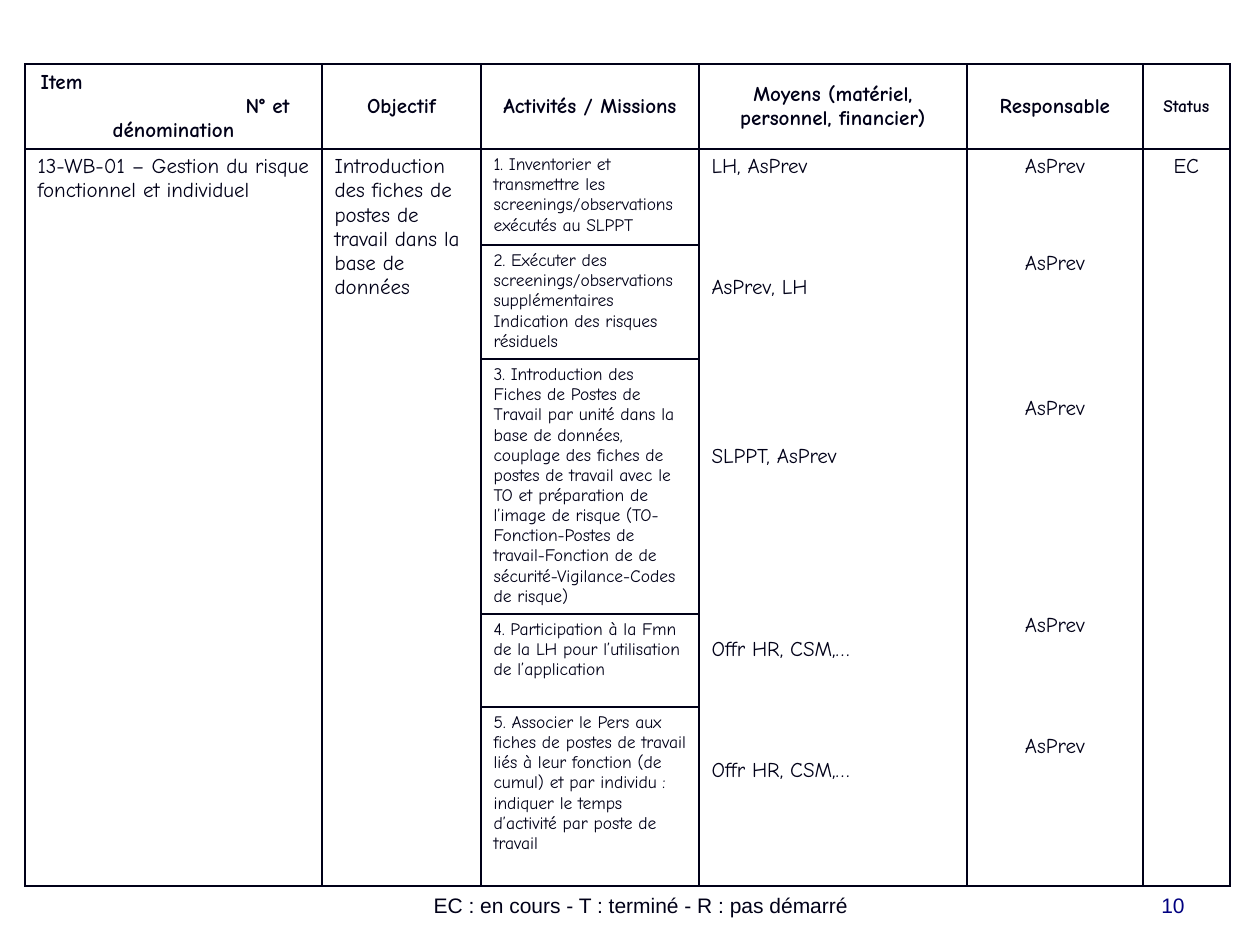
import pptx
import pptx.util
import pptx.dml.color
import pptx.enum.text
import pptx.oxml.ns
from lxml import etree

COLORS = {"ink": "000018", "number": "000080"}
ALIGN = pptx.enum.text.PP_ALIGN
ANCHOR = pptx.enum.text.MSO_ANCHOR
LINE_HEIGHT = 1.15  # line spacing as a share of the text size


def px(length):
    return pptx.util.Emu(round(length * 914400 / 126))


def write(paragraph, text, font="Comic Neue", size=12, color="ink",
          bold=False, align=ALIGN.LEFT, skip=0, indent=0):
    """Fill a paragraph; skip is the number of lines left open above it."""
    if indent:
        paragraph._p.get_or_add_pPr().set("marL", str(px(indent)))
    paragraph.alignment = align
    line = round(size * LINE_HEIGHT, 2)
    paragraph.line_spacing = pptx.util.Pt(line)
    if skip:
        paragraph.space_before = pptx.util.Pt(round(skip * line, 2))
    run = paragraph.add_run()
    run.text = text
    run.font.name = font
    run.font.size = pptx.util.Pt(size)
    run.font.bold = bold
    run.font.color.rgb = pptx.dml.color.RGBColor.from_string(COLORS[color])


class PlanSlide:
    def __init__(self, presentation):
        self.slide = presentation.slides.add_slide(presentation.slide_layouts[6])

    def label(self, left, top, width, height, text, **style):
        box = self.slide.shapes.add_textbox(px(left), px(top), px(width), px(height))
        box.text_frame.word_wrap = True
        box.text_frame.vertical_anchor = ANCHOR.BOTTOM
        write(box.text_frame.paragraphs[0], text, font="Arial", **style)

    def table(self, left, top, widths, heights):
        frame = self.slide.shapes.add_table(
            len(heights), len(widths), px(left), px(top),
            px(sum(widths)), px(sum(heights)))
        grid = frame.table
        grid.first_row = grid.horz_banding = False
        for column, width in zip(grid.columns, widths):
            column.width = px(width)
        for row, height in zip(grid.rows, heights):
            row.height = px(height)
        for cell in grid.iter_cells():
            self.border(cell)
            cell.fill.background()
        return grid

    def border(self, cell):
        qn = pptx.oxml.ns.qn
        properties = cell._tc.get_or_add_tcPr()
        for side in ("a:lnL", "a:lnR", "a:lnT", "a:lnB"):
            line = etree.SubElement(properties, qn(side), w=str(pptx.util.Pt(1)))
            fill = etree.SubElement(line, qn("a:solidFill"))
            etree.SubElement(fill, qn("a:srgbClr"), val=COLORS["ink"])

    def cell(self, cell, lines, anchor=ANCHOR.TOP, margins=(6, 0), **style):
        """Each line is a text with its own format options."""
        cell.vertical_anchor = anchor
        cell.margin_top, cell.margin_bottom = map(px, margins)
        frame = cell.text_frame
        for index, (text, options) in enumerate(lines):
            paragraph = frame.add_paragraph() if index else frame.paragraphs[0]
            write(paragraph, text, **{**style, **options})


HEADINGS = [
    [("Item", {"align": ALIGN.LEFT, "indent": 3}),
     ("N° et", {"align": ALIGN.LEFT, "indent": 208}),
     ("dénomination", {})],
    [("Objectif", {})],
    [("Activités / Missions", {})],
    [("Moyens (matériel, personnel, financier)", {})],
    [("Responsable", {})],
    [("Status", {"size": 10})],
]

ACTIVITIES = [
    ["1. Inventorier et transmettre les screenings/observations exécutés au SLPPT"],
    ["2. Exécuter des screenings/observations supplémentaires",
     "Indication des risques résiduels"],
    ["3. Introduction des Fiches de Postes de Travail par unité dans la base de "
     "données, couplage des fiches de postes de travail avec le TO et préparation "
     "de l’image de risque (TO-Fonction-Postes de travail-Fonction de de "
     "sécurité-Vigilance-Codes de risque)"],
    ["4. Participation à la Fmn de la LH pour l’utilisation de l’application"],
    ["5. Associer le Pers aux fiches de postes de travail liés à leur fonction "
     "(de cumul) et par individu : indiquer le temps d’activité par poste de travail"],
]

MEANS = [("LH, AsPrev", 0), ("AsPrev, LH", 4), ("SLPPT, AsPrev", 6),
         ("Offr HR, CSM,…", 7), ("Offr HR, CSM,…", 4)]
RESPONSIBLE = [("AsPrev", skip) for skip in (0, 3, 5, 8, 4)]

# Columns that span all activities: column, (text, lines skipped), alignment
SPANNING = [
    (0, [("13-WB-01 – Gestion du risque fonctionnel et individuel", 0)], ALIGN.LEFT),
    (1, [("Introduction des fiches de postes de travail dans la base de données", 0)],
     ALIGN.LEFT),
    (3, MEANS, ALIGN.LEFT),
    (4, RESPONSIBLE, ALIGN.CENTER),
    (5, [("EC", 0)], ALIGN.CENTER),
]


def main():
    presentation = pptx.Presentation()
    presentation.slide_width = px(1260)
    presentation.slide_height = px(945)
    plan = PlanSlide(presentation)

    # Legend of the status codes
    plan.label(294, 861, 694, 63, "EC : en cours - T : terminé - R : pas démarré",
               align=ALIGN.CENTER)

    # Action plan
    actions = plan.table(25, 64, widths=[297, 159, 218, 268, 176, 87],
                         heights=[85, 96, 114, 255, 93, 179])
    for column, heading in enumerate(HEADINGS):
        plan.cell(actions.cell(0, column), heading, anchor=ANCHOR.MIDDLE,
                  margins=(3, 3), bold=True, align=ALIGN.CENTER)
    for row, activity in enumerate(ACTIVITIES, start=1):
        plan.cell(actions.cell(row, 2), [(text, {}) for text in activity], size=10)
    for column, entries, align in SPANNING:
        actions.cell(1, column).merge(actions.cell(len(ACTIVITIES), column))
        plan.cell(actions.cell(1, column),
                  [(text, {"skip": skip}) for text, skip in entries], align=align)

    # Slide number
    plan.label(903, 861, 294, 63, "10", color="number", align=ALIGN.RIGHT)

    presentation.save("out.pptx")


if __name__ == "__main__":
    main()
